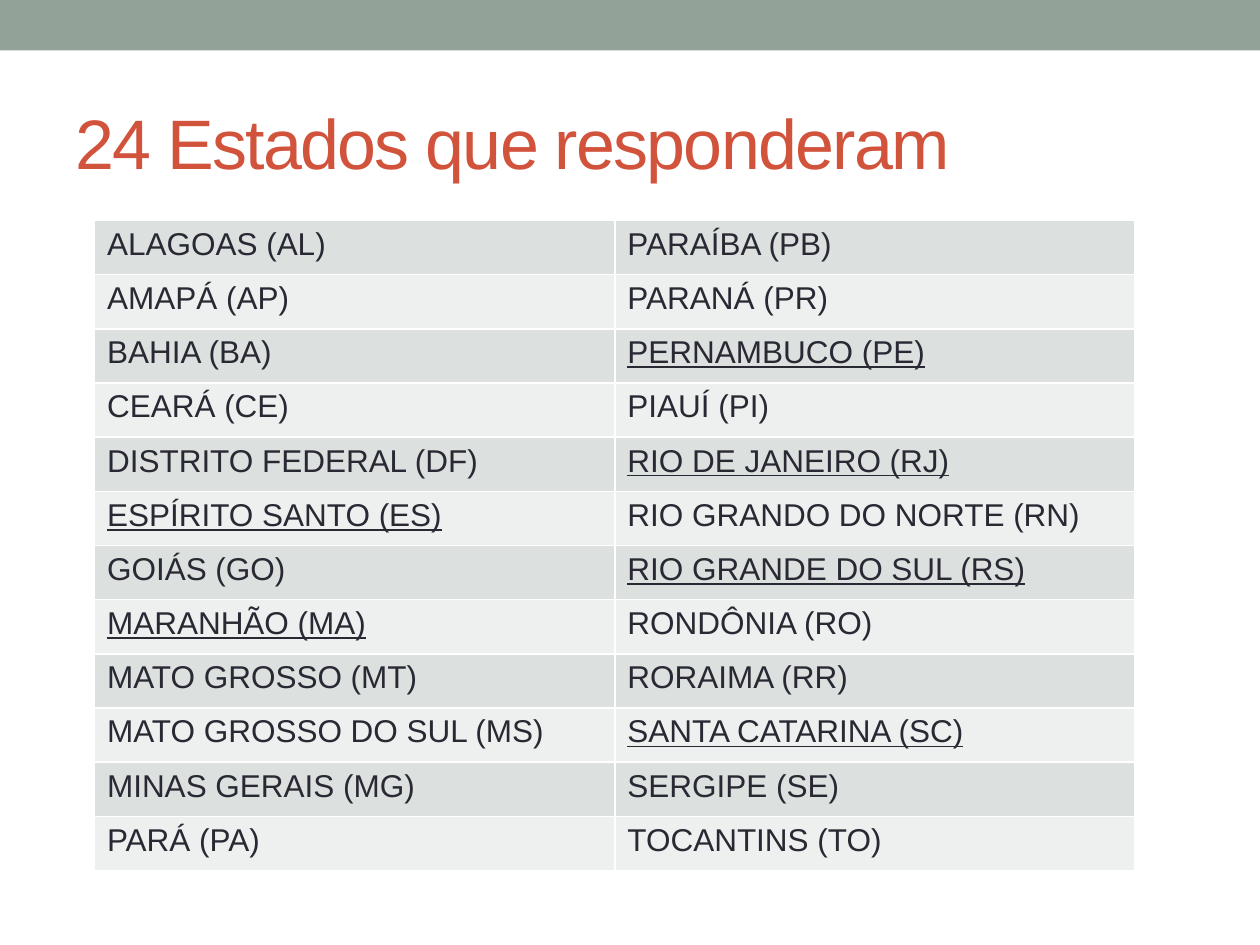
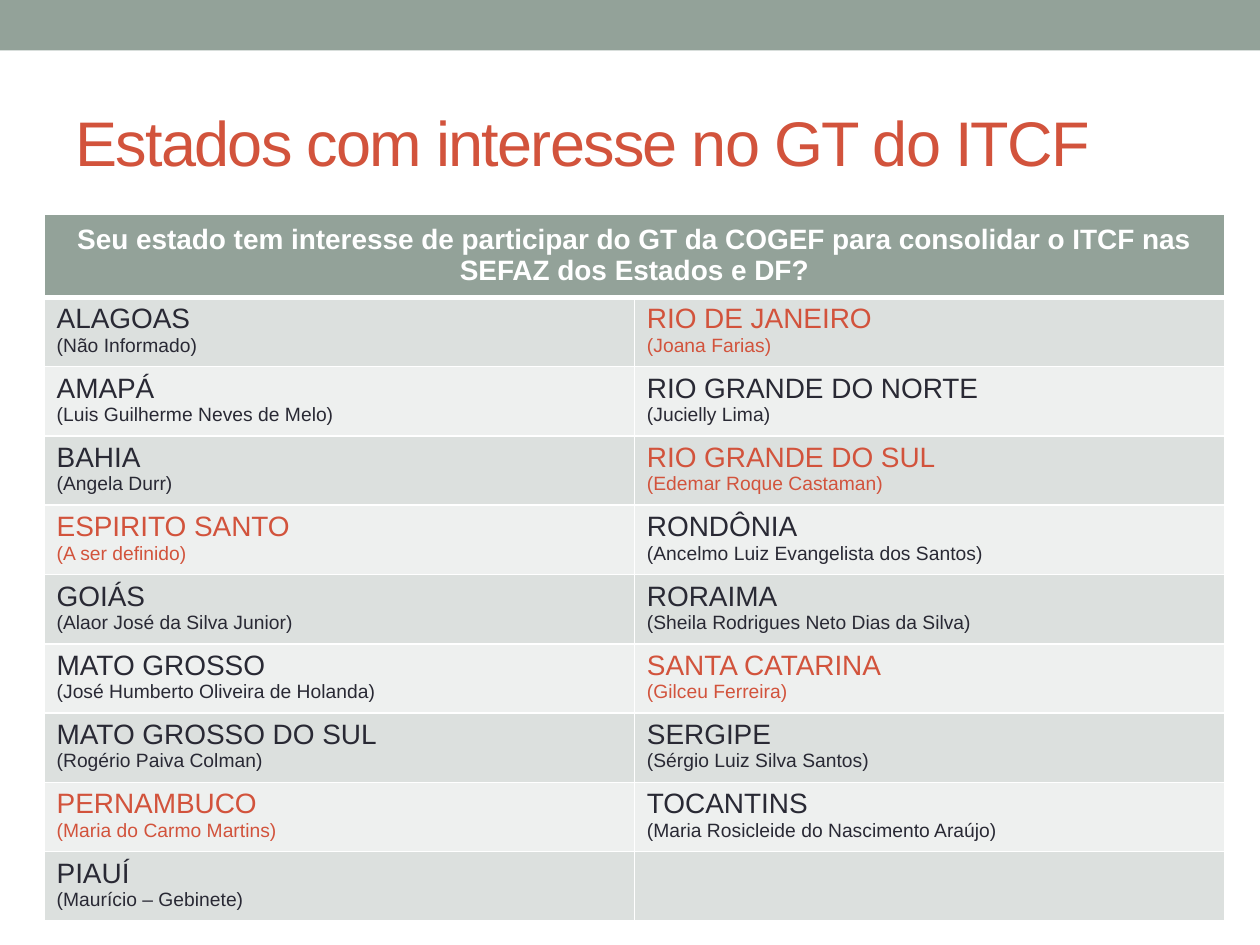
"""Builds the two slides on the states that answered and those joining the working group."""
from dataclasses import dataclass

from lxml.etree import SubElement
from pptx import Presentation
from pptx.dml.color import RGBColor as Rgb
from pptx.enum.shapes import MSO_SHAPE as Shape
from pptx.enum.text import MSO_ANCHOR as Anchor, MSO_AUTO_SIZE as AutoSize, PP_ALIGN as Align
from pptx.oxml.ns import qn
from pptx.util import Inches, Pt


@dataclass(frozen=True)
class Theme:
    font: str = "Arial"
    sage: str = "93A299"
    accent: str = "D2533C"
    ink: str = "292934"
    white: str = "FFFFFF"
    stripes: tuple = ("DCE0DE", "EEF0EF")
    title_size: int = 40
    long_title_size: int = 36
    list_size: int = 18
    state_size: int = 16
    contact_size: int = 11
    rule: int = 1
    header_rule: int = 3


THEME = Theme()

RESPONDENTS = [
    ("ALAGOAS (AL)", "PARAÍBA (PB)"),
    ("AMAPÁ (AP)", "PARANÁ (PR)"),
    ("BAHIA (BA)", "PERNAMBUCO (PE)"),
    ("CEARÁ (CE)", "PIAUÍ (PI)"),
    ("DISTRITO FEDERAL (DF)", "RIO DE JANEIRO (RJ)"),
    ("ESPÍRITO SANTO (ES)", "RIO GRANDO DO NORTE (RN)"),
    ("GOIÁS (GO)", "RIO GRANDE DO SUL (RS)"),
    ("MARANHÃO (MA)", "RONDÔNIA (RO)"),
    ("MATO GROSSO (MT)", "RORAIMA (RR)"),
    ("MATO GROSSO DO SUL (MS)", "SANTA CATARINA (SC)"),
    ("MINAS GERAIS (MG)", "SERGIPE (SE)"),
    ("PARÁ (PA)", "TOCANTINS (TO)"),
]
UNDERLINED = ("(PE)", "(RJ)", "(ES)", "(RS)", "(MA)", "(SC)")

QUESTION = ("Seu estado tem interesse de participar do GT da COGEF "
            "para consolidar o ITCF nas SEFAZ dos Estados e DF?")
INTERESTED = [
    ("ALAGOAS", "Não Informado"),
    ("AMAPÁ", "Luis Guilherme Neves de Melo"),
    ("BAHIA", "Angela Durr"),
    ("ESPIRITO SANTO", "A ser definido"),
    ("GOIÁS", "Alaor José da Silva Junior"),
    ("MATO GROSSO", "José Humberto Oliveira de Holanda"),
    ("MATO GROSSO DO SUL", "Rogério Paiva Colman"),
    ("PERNAMBUCO", "Maria do Carmo Martins"),
    ("PIAUÍ", "Maurício – Gebinete"),
    ("RIO DE JANEIRO", "Joana Farias"),
    ("RIO GRANDE DO NORTE", "Jucielly Lima"),
    ("RIO GRANDE DO SUL", "Edemar Roque Castaman"),
    ("RONDÔNIA", "Ancelmo Luiz Evangelista dos Santos"),
    ("RORAIMA", "Sheila Rodrigues Neto Dias da Silva"),
    ("SANTA CATARINA", "Gilceu Ferreira"),
    ("SERGIPE", "Sérgio Luiz Silva Santos"),
    ("TOCANTINS", "Maria Rosicleide do Nascimento Araújo"),
]
HIGHLIGHTED = {"ESPIRITO SANTO", "PERNAMBUCO", "RIO DE JANEIRO",
               "RIO GRANDE DO SUL", "SANTA CATARINA"}


def write(paragraph, text, size, color=THEME.ink, bold=False, underline=False,
          align=Align.LEFT, spacing=0):
    paragraph.alignment = align
    run = paragraph.add_run()
    run.text = text
    font = run.font
    font.name, font.size, font.bold, font.underline = THEME.font, Pt(size), bold, underline
    font.color.rgb = Rgb.from_string(color)
    if spacing:
        run._r.get_or_add_rPr().set("spc", str(spacing * 100))


class Deck:
    def __init__(self, theme):
        self.theme = theme
        self.presentation = Presentation()
        self.presentation.slide_width = Inches(10)
        self.presentation.slide_height = Inches(7.5)
        self.slide = None

    def add_slide(self, title, title_size):
        self.slide = self.presentation.slides.add_slide(self.presentation.slide_layouts[5])
        self.add_band()
        self.set_title(title, title_size)

    def add_band(self):
        band = self.slide.shapes.add_shape(
            Shape.RECTANGLE, 0, 0, self.presentation.slide_width, Inches(0.4))
        band.shadow.inherit = False
        band.fill.solid()
        band.fill.fore_color.rgb = Rgb.from_string(self.theme.sage)
        band.line.fill.background()

    def set_title(self, text, size):
        title = self.slide.shapes.title
        title.left, title.top = Inches(0.5), Inches(0.58)
        title.width, title.height = Inches(9), Inches(1.08)
        frame = title.text_frame
        frame.auto_size = AutoSize.NONE
        frame.word_wrap = True
        frame.vertical_anchor = Anchor.MIDDLE
        write(frame.paragraphs[0], text, size, color=self.theme.accent, spacing=-1)

    def add_grid(self, left, top, width, row_heights):
        grid = self.slide.shapes.add_table(
            len(row_heights), 2, Inches(left), Inches(top),
            Inches(width), Inches(sum(row_heights))).table
        grid.first_row = grid.horz_banding = False
        for row, height in zip(grid.rows, row_heights):
            row.height = Inches(height)
        return grid

    def style_cell(self, cell, fill, bottom=None):
        properties = cell._tc.get_or_add_tcPr()
        for side in ("lnL", "lnR", "lnT", "lnB"):
            width = bottom if bottom and side == "lnB" else self.theme.rule
            border = SubElement(properties, qn(f"a:{side}"), w=str(Pt(width)))
            SubElement(SubElement(border, qn("a:solidFill")), qn("a:srgbClr"),
                       val=self.theme.white)
        cell.fill.solid()
        cell.fill.fore_color.rgb = Rgb.from_string(fill)

    def add_stripes(self, grid, first_row=0):
        for row in range(first_row, len(grid.rows)):
            for column in range(2):
                self.style_cell(grid.cell(row, column),
                                self.theme.stripes[(row - first_row) % 2])

    def add_header(self, grid, text):
        for column in range(2):
            self.style_cell(grid.cell(0, column), self.theme.sage, self.theme.header_rule)
        header = grid.cell(0, 0)
        header.merge(grid.cell(0, 1))
        header.vertical_anchor = Anchor.MIDDLE
        write(header.text_frame.paragraphs[0], text, self.theme.state_size,
              color=self.theme.white, bold=True, align=Align.CENTER)


def add_respondents(deck):
    deck.add_slide("24 Estados que responderam", THEME.title_size)
    grid = deck.add_grid(0.75, 1.75, 8.26, [0.43] * len(RESPONDENTS))
    deck.add_stripes(grid)
    for row, states in enumerate(RESPONDENTS):
        for column, state in enumerate(states):
            write(grid.cell(row, column).text_frame.paragraphs[0], state,
                  THEME.list_size, underline=state.endswith(UNDERLINED))


def add_interested(deck):
    deck.add_slide("Estados com interesse no GT do ITCF", THEME.long_title_size)
    rows_per_column = (len(INTERESTED) + 1) // 2
    grid = deck.add_grid(0.35, 1.7, 9.37, [0.66] + [0.55] * rows_per_column)
    deck.add_header(grid, QUESTION)
    deck.add_stripes(grid, first_row=1)
    for index, (state, contact) in enumerate(INTERESTED):
        column, row = divmod(index, rows_per_column)
        frame = grid.cell(row + 1, column).text_frame
        color = THEME.accent if state in HIGHLIGHTED else THEME.ink
        write(frame.paragraphs[0], state, THEME.state_size, color=color)
        write(frame.add_paragraph(), f"({contact})", THEME.contact_size, color=color)


def main():
    deck = Deck(THEME)
    add_respondents(deck)
    add_interested(deck)
    deck.presentation.save("out.pptx")


if __name__ == "__main__":
    main()
